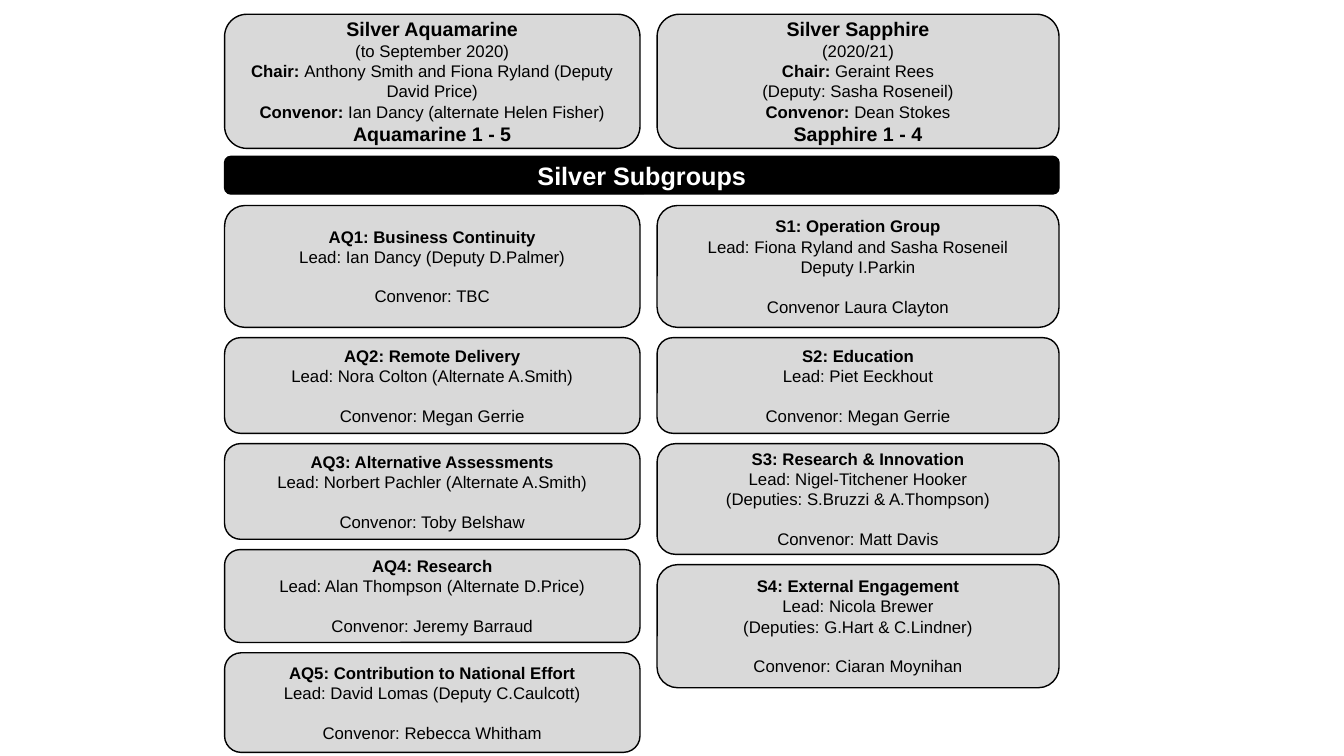
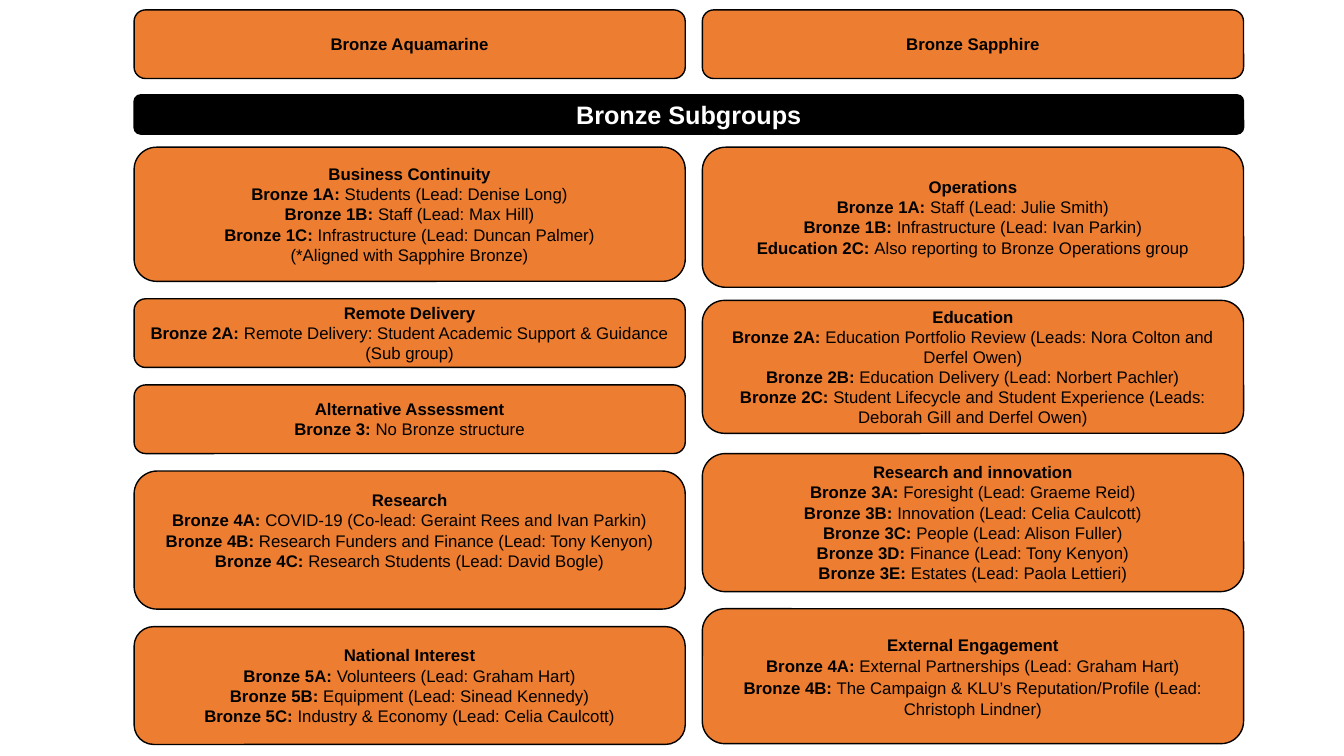
from dataclasses import dataclass

from pptx import Presentation
from pptx import util as u
from pptx.dml.color import RGBColor
from pptx.enum import shapes, text


@dataclass(frozen=True)
class Theme:
    font: str = "Arial"
    ink: str = "000000"
    paper: str = "FFFFFF"
    silver: str = "D9D9D9"
    bronze: str = "ED7D31"
    body: int = 12
    heading: int = 14
    banner: int = 18
    outline: int = 1
    gap: int = 14


THEME = Theme()


@dataclass
class Line:
    bold: str = ""
    plain: str = ""
    size: int = THEME.body
    gap: int = 0


@dataclass
class Card:
    height: float
    lines: list
    bottom: float = 0.13
    spacing: float = 1.0


def apply(target, formats):
    for name, value in formats.items():
        setattr(target, name, value)


class Chart:
    def __init__(self, theme):
        self.theme = theme
        self.deck = Presentation()
        apply(self.deck, {"slide_width": u.Cm(33.87), "slide_height": u.Cm(19.05)})

    def new_page(self, fill):
        self.page = self.deck.slides.add_slide(self.deck.slide_layouts[6])
        self.fill = fill

    def box(self, left, top, width, card, fill=None, color=None):
        theme = self.theme
        box = self.page.shapes.add_shape(
            shapes.MSO_SHAPE.ROUNDED_RECTANGLE,
            *map(u.Cm, (left, top, width, card.height)))
        box.shadow.inherit = False
        box.fill.solid()
        box.fill.fore_color.rgb = RGBColor.from_string(fill or self.fill)
        box.line.color.rgb = RGBColor.from_string(theme.ink)
        box.line.width = u.Pt(theme.outline)
        frame = box.text_frame
        apply(frame, {"word_wrap": True, "margin_bottom": u.Cm(card.bottom),
                      "vertical_anchor": text.MSO_ANCHOR.MIDDLE})
        for index, line in enumerate(card.lines):
            para = frame.add_paragraph() if index else frame.paragraphs[0]
            apply(para, {"alignment": text.PP_ALIGN.CENTER,
                         "line_spacing": card.spacing,
                         "space_before": u.Pt(line.gap)})
            for words, bold in ((line.bold, True), (line.plain, False)):
                if words:
                    self.span(para, words, bold, line.size, color or theme.ink)

    def span(self, para, words, bold, size, color):
        span = para.add_run()
        span.text = words
        apply(span.font, {"name": self.theme.font, "size": u.Pt(size), "bold": bold})
        span.font.color.rgb = RGBColor.from_string(color)

    def banner(self, left, top, width, height, words):
        card = Card(height, [Line(words, size=self.theme.banner)])
        self.box(left, top, width, card, self.theme.ink, self.theme.paper)

    def column(self, left, top, width, gaps, cards):
        for card, gap in zip(cards, (*gaps, 0)):
            self.box(left, top, width, card)
            top += card.height + gap

    def save(self):
        self.deck.save("out.pptx")


def silver_head(title, groups, *details):
    return Card(3.38, [Line(title, size=THEME.heading), *details,
                       Line(groups, size=THEME.heading)])


def silver_card(height, title, *details):
    *leads, convenor = details
    return Card(height, [Line(title), *(Line(plain=lead) for lead in leads),
                         Line(plain=convenor, gap=THEME.gap)])


def bronze_card(height, title, *groups, **options):
    return Card(height, [Line(title), *(Line(*group) for group in groups)], **options)


def silver_page(chart):
    chart.new_page(THEME.silver)
    left, left_width, right, right_width = 5.66, 10.47, 16.56, 10.13
    chart.box(left, 0.36, left_width, silver_head(
        "Silver Aquamarine", "Aquamarine 1 - 5",
        Line(plain="(to September 2020)"),
        Line("Chair: ", "Anthony Smith and Fiona Ryland (Deputy David Price)"),
        Line("Convenor:", " Ian Dancy (alternate Helen Fisher)")))
    chart.box(right, 0.36, right_width, silver_head(
        "Silver Sapphire", "Sapphire 1 - 4",
        Line(plain="(2020/21)"),
        Line("Chair: ", "Geraint Rees"),
        Line(plain="(Deputy: Sasha Roseneil)"),
        Line("Convenor: ", "Dean Stokes")))
    chart.banner(left, 3.94, right + right_width - left, 0.95, "Silver Subgroups")
    gaps = [0.26] * 4
    chart.column(left, 5.18, left_width, gaps, [
        silver_card(3.07, "AQ1: Business Continuity",
                    "Lead: Ian Dancy (Deputy D.Palmer)", "Convenor: TBC"),
        silver_card(2.41, "AQ2: Remote Delivery",
                    "Lead: Nora Colton (Alternate A.Smith)", "Convenor: Megan Gerrie"),
        silver_card(2.41, "AQ3: Alternative Assessments",
                    "Lead: Norbert Pachler (Alternate A.Smith)", "Convenor: Toby Belshaw"),
        silver_card(2.34, "AQ4: Research",
                    "Lead: Alan Thompson (Alternate D.Price)", "Convenor: Jeremy Barraud"),
        silver_card(2.51, "AQ5: Contribution to National Effort",
                    "Lead: David Lomas (Deputy C.Caulcott)", "Convenor: Rebecca Whitham"),
    ])
    chart.column(right, 5.18, right_width, gaps, [
        silver_card(3.07, "S1: Operation Group", "Lead: Fiona Ryland and Sasha Roseneil",
                    "Deputy I.Parkin", "Convenor Laura Clayton"),
        silver_card(2.41, "S2: Education", "Lead: Piet Eeckhout", "Convenor: Megan Gerrie"),
        silver_card(2.79, "S3: Research & Innovation", "Lead: Nigel-Titchener Hooker",
                    "(Deputies: S.Bruzzi & A.Thompson)", "Convenor: Matt Davis"),
        silver_card(3.1, "S4: External Engagement", "Lead: Nicola Brewer",
                    "(Deputies: G.Hart & C.Lindner)", "Convenor: Ciaran Moynihan"),
    ])


def bronze_page(chart):
    chart.new_page(THEME.bronze)
    left, left_width, right, right_width = 3.38, 13.89, 17.7, 13.64
    chart.box(left, 0.25, left_width, bronze_card(1.73, "Bronze Aquamarine"))
    chart.box(right, 0.25, right_width, bronze_card(1.73, "Bronze Sapphire"))
    chart.banner(left, 2.39, right + right_width - left, 0.99, "Bronze Subgroups")
    chart.column(left, 3.71, left_width, [0.44] * 4, [
        bronze_card(3.38, "Business Continuity",
                    ("Bronze 1A: ", "Students (Lead: Denise Long)"),
                    ("Bronze 1B: ", "Staff (Lead: Max Hill)"),
                    ("Bronze 1C: ", "Infrastructure (Lead: Duncan Palmer)"),
                    ("", "(*Aligned with Sapphire Bronze)")),
        bronze_card(1.73, "Remote Delivery",
                    ("Bronze 2A: ", "Remote Delivery: Student Academic Support & "
                                    "Guidance (Sub group)")),
        bronze_card(1.73, "Alternative Assessment",
                    ("Bronze 3: ", "No Bronze structure")),
        bronze_card(3.48, "Research",
                    ("Bronze 4A: ", "COVID-19 (Co-lead: Geraint Rees and Ivan Parkin)"),
                    ("Bronze 4B: ", "Research Funders and Finance (Lead: Tony Kenyon)"),
                    ("Bronze 4C: ", "Research Students (Lead: David Bogle)"),
                    bottom=0.62),
        bronze_card(2.97, "National Interest",
                    ("Bronze 5A: ", "Volunteers (Lead: Graham Hart)"),
                    ("Bronze 5B: ", "Equipment (Lead: Sinead Kennedy)"),
                    ("Bronze 5C: ", "Industry & Economy (Lead: Celia Caulcott)")),
    ])
    chart.column(right, 3.71, right_width, [0.33, 0.51, 0.43], [
        bronze_card(3.53, "Operations",
                    ("Bronze 1A: ", "Staff (Lead: Julie Smith)"),
                    ("Bronze 1B: ", "Infrastructure (Lead: Ivan Parkin)"),
                    ("Education 2C: ", "Also reporting to Bronze Operations group")),
        bronze_card(3.35, "Education",
                    ("Bronze 2A: ", "Education Portfolio Review (Leads: Nora Colton "
                                    "and Derfel Owen)"),
                    ("Bronze 2B: ", "Education Delivery (Lead: Norbert Pachler)"),
                    ("Bronze 2C:", " Student Lifecycle and Student Experience (Leads: "
                                   "Deborah Gill and Derfel Owen)")),
        bronze_card(3.48, "Research and innovation",
                    ("Bronze 3A: ", "Foresight (Lead: Graeme Reid)"),
                    ("Bronze 3B: ", "Innovation (Lead: Celia Caulcott)"),
                    ("Bronze 3C: ", "People (Lead: Alison Fuller)"),
                    ("Bronze 3D: ", "Finance (Lead: Tony Kenyon)"),
                    ("Bronze 3E: ", "Estates (Lead: Paola Lettieri)")),
        bronze_card(3.4, "External Engagement",
                    ("Bronze 4A: ", "External Partnerships (Lead: Graham Hart)"),
                    ("Bronze 4B:", " The Campaign & KLU’s Reputation/Profile (Lead: "
                                   "Christoph Lindner)"),
                    spacing=1.07),
    ])


def main():
    chart = Chart(THEME)
    silver_page(chart)
    bronze_page(chart)
    chart.save()


if __name__ == "__main__":
    main()
